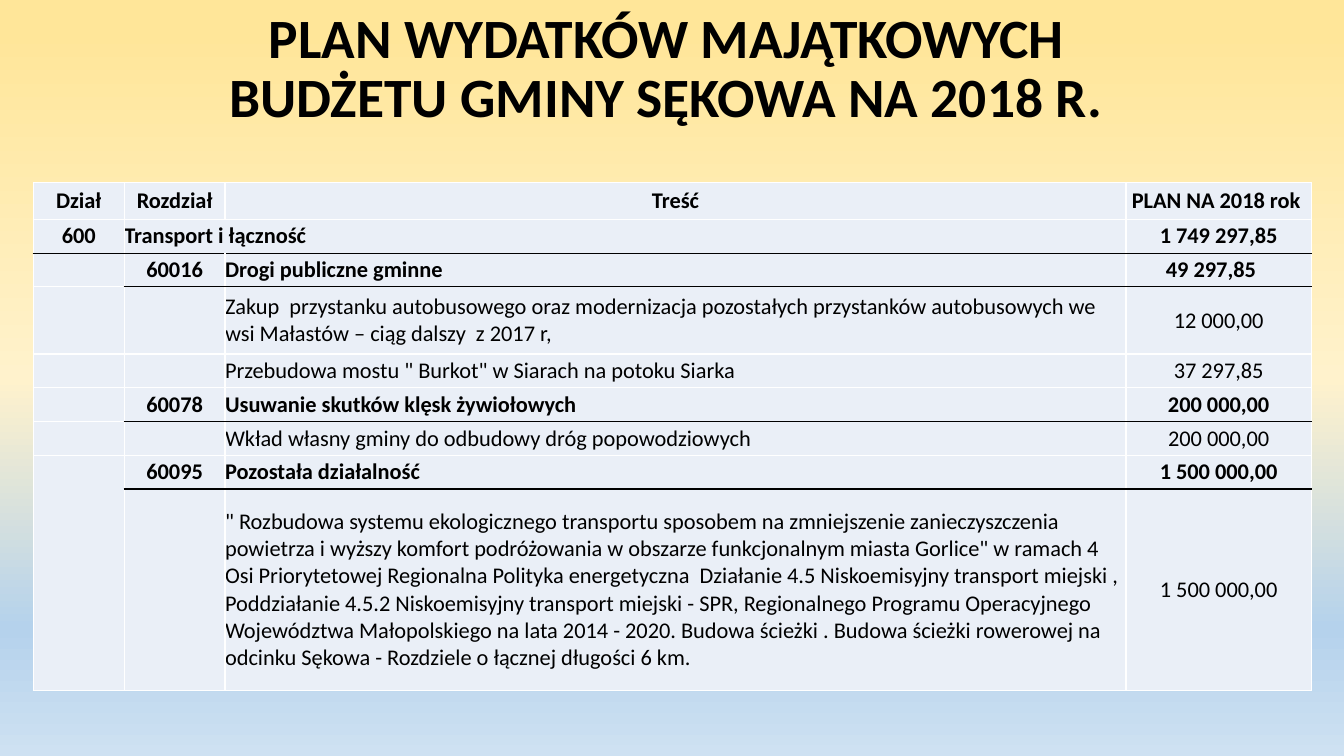
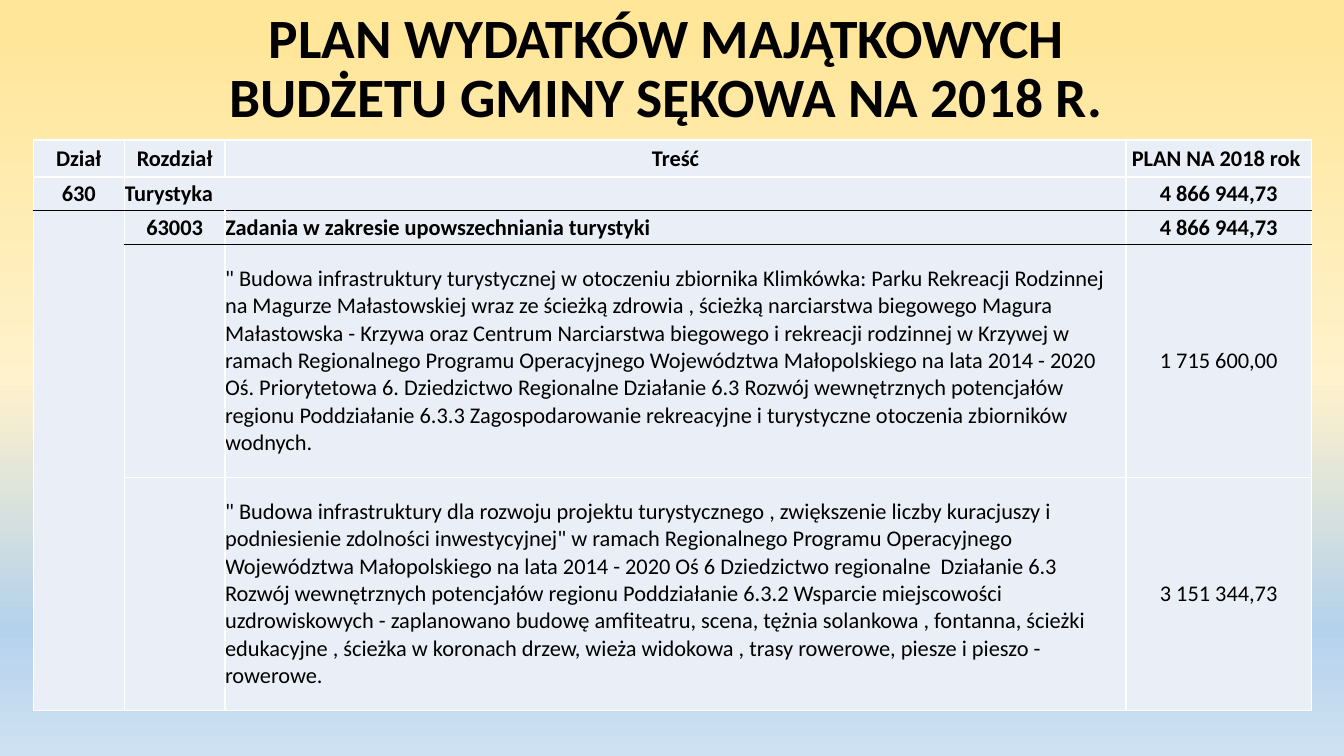
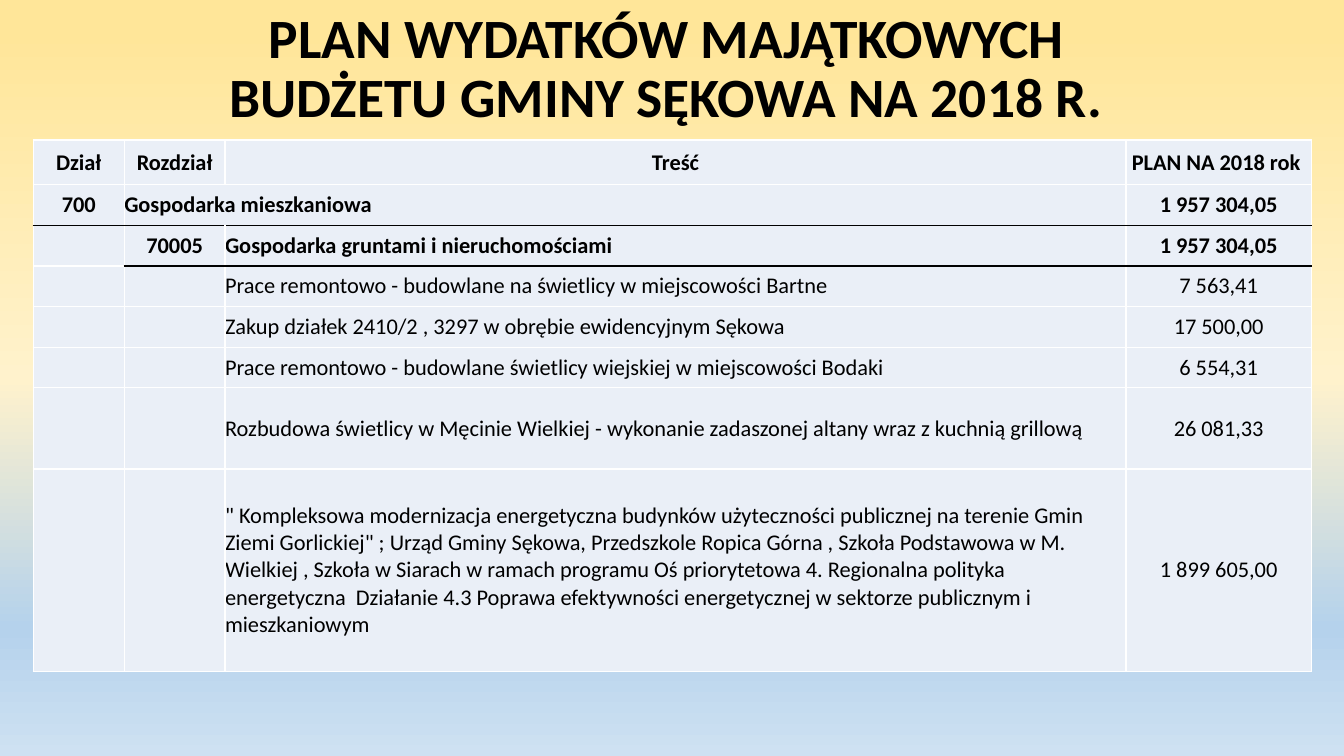
from lxml import etree
from pptx import Presentation
from pptx.dml.color import RGBColor
from pptx.enum.text import MSO_ANCHOR, PP_ALIGN
from pptx.oxml.ns import qn
from pptx.util import Pt

MIDDLE = MSO_ANCHOR.MIDDLE
LEFT, CENTER = PP_ALIGN.LEFT, PP_ALIGN.CENTER

FONT = "Calibri"
BLACK, WHITE, PALE = "000000", "FFFFFF", "EAEFF7"
STOPS = [(4, "FFE699"), (50, "FFF2CC"), (83, "B5D2EC"), (100, "CEE1F2")]
EDGE, WIDE, HEAD = 23.75, 913, 100
COLS = [65, 72, 643.5, 132.5]
TITLE = "PLAN WYDATKÓW MAJĄTKOWYCH \vBUDŻETU GMINY SĘKOWA NA 2018 R. "
LABELS = ("Dział", "Rozdział", "Treść", "PLAN NA 2018 rok ")


def color(code):
    """Turn a hex string into a colour."""
    return RGBColor.from_string(code)


def solid(parent, code):
    """Add a solid fill to an XML element."""
    fill = etree.SubElement(parent, qn("a:solidFill"))
    etree.SubElement(fill, qn("a:srgbClr"), val=code)


def is_bold(row):
    """Tell whether a row carries a section or chapter number."""
    return bool(row[0] or row[1])


def is_ruled(rows, r, c):
    """Tell whether a black rule runs below a cell."""
    return 0 < r < len(rows) and is_bold(rows[r]) and (c > 0 or bool(rows[r][0]))


class Deck:
    """Shared style and the current slide."""

    def __init__(self):
        """Set the slide size and the shared background."""
        self.prs = Presentation()
        self.prs.slide_width, self.prs.slide_height = Pt(960), Pt(540)
        master = self.prs.slide_master
        fill = master.background.fill
        fill.gradient()
        fill.gradient_angle = 270
        stops = next(master.element.iter(qn("a:gsLst")))
        for old in list(stops):
            stops.remove(old)
        for pos, code in STOPS:
            stop = etree.SubElement(stops, qn("a:gs"), pos=str(pos * 1000))
            etree.SubElement(stop, qn("a:srgbClr"), val=code)

    def page(self):
        """Start a slide with the shared title."""
        self.slide = self.prs.slides.add_slide(self.prs.slide_layouts[6])
        box = self.slide.shapes.add_textbox(Pt(EDGE), Pt(0), Pt(WIDE), Pt(HEAD))
        frame = box.text_frame
        frame.word_wrap = True
        frame.vertical_anchor = MIDDLE
        frame.text = TITLE
        para = frame.paragraphs[0]
        para.line_spacing = 0.9
        self.style(para, 39.6, True, CENTER)

    def style(self, para, size, bold, align):
        """Set the font and alignment of a paragraph."""
        para.alignment = align
        font = para.font
        font.name, font.size, font.bold = FONT, Pt(size), bold
        font.color.rgb = color(BLACK)

    def border(self, cell, top, base):
        """Draw the four borders of a cell."""
        props = cell._tc.get_or_add_tcPr()
        for side, code in zip("LRTB", (WHITE, WHITE, top, base)):
            line = etree.SubElement(props, qn("a:ln" + side), w=str(Pt(1)))
            solid(line, code)

    def cell(self, cell, text, bold, align):
        """Fill a table cell and write its text."""
        cell.fill.solid()
        cell.fill.fore_color.rgb = color(PALE)
        cell.margin_left = cell.margin_right = Pt(0)
        cell.margin_top = cell.margin_bottom = Pt(0)
        cell.vertical_anchor = MIDDLE
        cell.text = text
        self.style(cell.text_frame.paragraphs[0], 16, bold, align)

    def table(self, top, highs, body, tall=None):
        """Add a budget table, merging the first column from row tall down."""
        rows = [LABELS] + body
        frame = self.slide.shapes.add_table(
            len(rows), len(COLS), Pt(EDGE), Pt(top), Pt(WIDE), Pt(sum(highs)))
        grid = frame.table
        grid.first_row = grid.horz_banding = False
        for col, wide in zip(grid.columns, COLS):
            col.width = Pt(wide)
        for r, (row, high) in enumerate(zip(rows, highs)):
            grid.rows[r].height = Pt(high)
            for c, text in enumerate(row):
                cell = grid.cell(r, c)
                above, below = (BLACK if is_ruled(rows, n, c) else WHITE
                                for n in (r - 1, r))
                self.border(cell, above, below)
                name = r > 0 and (c == 2 or (c == 1 and row[0]))
                self.cell(cell, text, is_bold(row), LEFT if name else CENTER)
            if r and row[0]:
                grid.cell(r, 1).merge(grid.cell(r, 2))
        if tall:
            grid.cell(tall, 0).merge(grid.cell(len(rows) - 1, 0))
        return grid


ROADS = [
    ("600", "Transport i łączność", "", "1 749 297,85"),
    ("", "60016", "Drogi publiczne gminne", "49 297,85"),
    ("", "", "Zakup  przystanku autobusowego oraz modernizacja pozostałych "
     "przystanków autobusowych we wsi Małastów – ciąg dalszy  z 2017 r,", "12 000,00"),
    ("", "", 'Przebudowa mostu " Burkot" w Siarach na potoku Siarka', "37 297,85"),
    ("", "60078", "Usuwanie skutków klęsk żywiołowych", "200 000,00"),
    ("", "", "Wkład własny gminy do odbudowy dróg popowodziowych", "200 000,00"),
    ("", "60095", "Pozostała działalność", "1 500 000,00"),
    ("", "", '" Rozbudowa systemu ekologicznego transportu sposobem na zmniejszenie '
     "zanieczyszczenia powietrza i wyższy komfort podróżowania w obszarze "
     'funkcjonalnym miasta Gorlice" w ramach 4 Osi Priorytetowej Regionalna '
     "Polityka energetyczna  Działanie 4.5 Niskoemisyjny transport miejski , "
     "Poddziałanie 4.5.2 Niskoemisyjny transport miejski - SPR, Regionalnego "
     "Programu Operacyjnego Województwa Małopolskiego na lata 2014 - 2020. "
     "Budowa ścieżki . Budowa ścieżki rowerowej na odcinku Sękowa - Rozdziele "
     "o łącznej długości 6 km.", "1 500 000,00"),
]
TOURS = [
    ("630", "Turystyka", "", "4 866 944,73"),
    ("", "63003", "Zadania w zakresie upowszechniania turystyki", "4 866 944,73"),
    ("", "", '" Budowa infrastruktury turystycznej w otoczeniu zbiornika Klimkówka: '
     "Parku Rekreacji Rodzinnej na Magurze Małastowskiej wraz ze ścieżką zdrowia , "
     "ścieżką narciarstwa biegowego Magura Małastowska - Krzywa oraz Centrum "
     "Narciarstwa biegowego i rekreacji rodzinnej w Krzywej w ramach Regionalnego "
     "Programu Operacyjnego Województwa Małopolskiego na lata 2014 - 2020 Oś. "
     "Priorytetowa 6. Dziedzictwo Regionalne Działanie 6.3 Rozwój wewnętrznych "
     "potencjałów regionu Poddziałanie 6.3.3 Zagospodarowanie rekreacyjne i "
     "turystyczne otoczenia zbiorników wodnych.", "1 715 600,00"),
    ("", "", '" Budowa infrastruktury dla rozwoju projektu turystycznego , '
     'zwiększenie liczby kuracjuszy i podniesienie zdolności inwestycyjnej" w '
     "ramach Regionalnego Programu Operacyjnego Województwa Małopolskiego na lata "
     "2014 - 2020 Oś 6 Dziedzictwo regionalne  Działanie 6.3 Rozwój wewnętrznych "
     "potencjałów regionu Poddziałanie 6.3.2 Wsparcie miejscowości uzdrowiskowych "
     "- zaplanowano budowę amfiteatru, scena, tężnia solankowa , fontanna, ścieżki "
     "edukacyjne , ścieżka w koronach drzew, wieża widokowa , trasy rowerowe, "
     "piesze i pieszo - rowerowe.", "3 151 344,73"),
]
HOMES = [
    ("700", "Gospodarka mieszkaniowa", "", "1 957 304,05"),
    ("", "70005", "Gospodarka gruntami i nieruchomościami", "1 957 304,05"),
    ("", "", "Prace remontowo - budowlane na świetlicy w miejscowości Bartne",
     "7 563,41"),
    ("", "", "Zakup działek 2410/2 , 3297 w obrębie ewidencyjnym Sękowa", "17 500,00"),
    ("", "", "Prace remontowo - budowlane świetlicy wiejskiej w miejscowości Bodaki",
     "6 554,31"),
    ("", "", "Rozbudowa świetlicy w Męcinie Wielkiej - wykonanie zadaszonej altany "
     "wraz z kuchnią grillową", "26 081,33"),
    ("", "", '" Kompleksowa modernizacja energetyczna budynków użyteczności '
     'publicznej na terenie Gmin Ziemi Gorlickiej" ; Urząd Gminy Sękowa, '
     "Przedszkole Ropica Górna , Szkoła Podstawowa w M. Wielkiej , Szkoła w "
     "Siarach w ramach programu Oś priorytetowa 4. Regionalna polityka "
     "energetyczna  Działanie 4.3 Poprawa efektywności energetycznej w sektorze "
     "publicznym i mieszkaniowym", "1 899 605,00"),
]


def main():
    """Build and save the three slides."""
    deck = Deck()
    deck.page()
    roads = deck.table(130.25, [26.5, 24.1, 24.1, 48] + [24.1] * 4 + [144], ROADS, 7)
    roads.cell(2, 3).margin_right = Pt(11)
    deck.page()
    deck.table(HEAD, [26.5, 24, 24, 166.5, 166.5], TOURS, 2)
    deck.page()
    deck.table(HEAD, [32] + [29] * 5 + [58, 144.5], HOMES)
    deck.prs.save("out.pptx")


if __name__ == "__main__":
    main()
